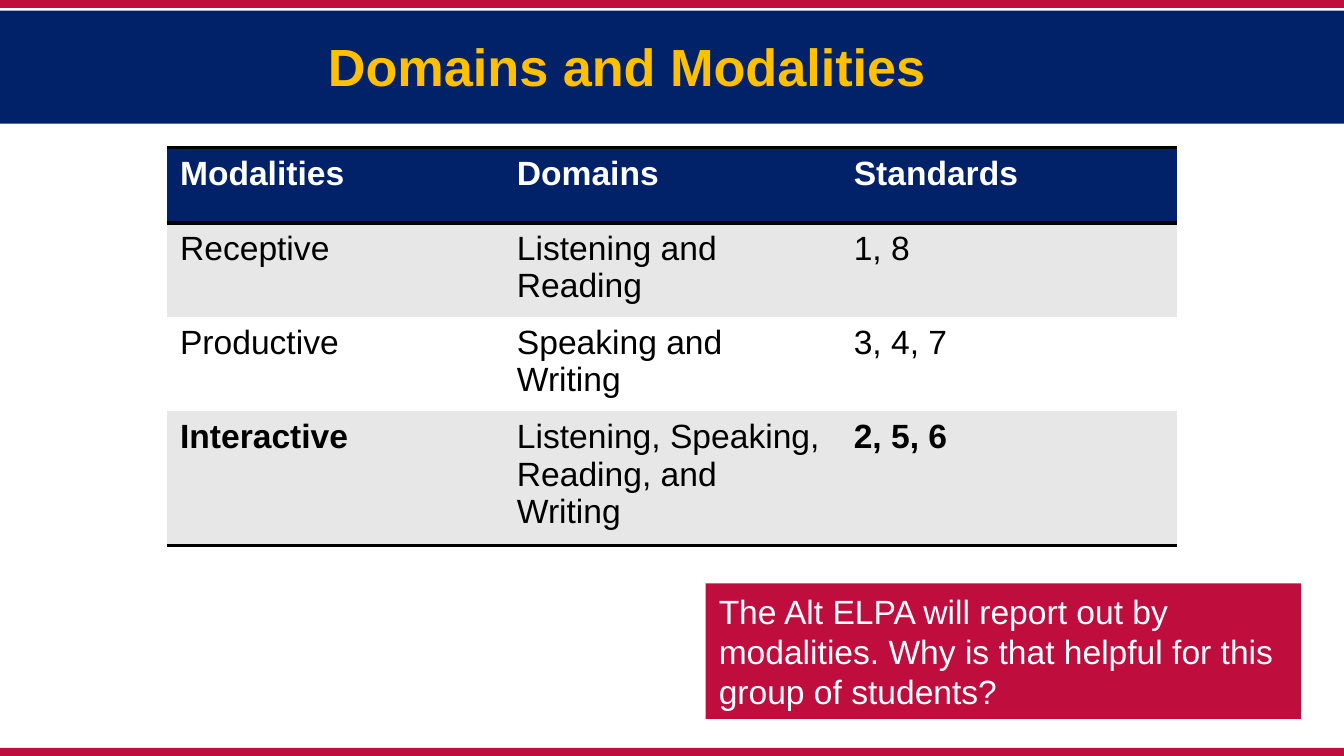
from dataclasses import dataclass

from lxml import etree
from pptx import Presentation
from pptx.dml.color import RGBColor
from pptx.enum.shapes import MSO_SHAPE
from pptx.enum.text import MSO_ANCHOR, PP_ALIGN
from pptx.oxml.ns import qn
from pptx.util import Inches, Pt

RECTANGLE = MSO_SHAPE.RECTANGLE
MIDDLE = MSO_ANCHOR.MIDDLE
LEFT = PP_ALIGN.LEFT
PLAIN_TABLE_STYLE = "{2D5ABB26-0587-4C30-8999-92F81FD0307C}"


@dataclass(frozen=True)
class Theme:
    font: str = "Arial"
    crimson: str = "BF0D3E"
    navy: str = "012169"
    gold: str = "FFC000"
    white: str = "FFFFFF"
    black: str = "000000"
    grey: str = "E7E7E7"
    title_size: int = 28
    body_size: int = 18
    border_width: int = 2


@dataclass(frozen=True)
class Box:
    left: float
    top: float
    width: float
    height: float

    def lengths(self) -> list:
        """Return the four measures as lengths."""
        return [Inches(value) for value in (self.left, self.top, self.width, self.height)]


@dataclass(frozen=True)
class Row:
    texts: tuple
    height: float
    fill: str
    color: str
    bold_columns: tuple = ()
    borders: tuple = ()


THEME = Theme()
SLIDE_WIDTH = 10
SLIDE_HEIGHT = SLIDE_WIDTH * 9 / 16
STRIPE_HEIGHT = 0.06
BANDS = [
    (Box(0, 0, SLIDE_WIDTH, STRIPE_HEIGHT), THEME.crimson),
    (Box(0, SLIDE_HEIGHT - STRIPE_HEIGHT, SLIDE_WIDTH, STRIPE_HEIGHT), THEME.crimson),
    (Box(0, 0.08, SLIDE_WIDTH, 0.84), THEME.navy),
]
TITLE_BOX = Box(2.34, 0.2, 5.13, 0.57)
TABLE_BOX = Box(1.24, 1.1, 7.52, 2.96)
CALLOUT_BOX = Box(5.25, 4.34, 4.43, 1.01)
CALLOUT_TEXT = ("The Alt ELPA will report out by modalities. "
                "Why is that helpful for this group of students?")
ROWS = [
    Row(("Modalities", "Domains", "Standards"), 0.56, THEME.navy, THEME.white,
        (0, 1, 2), ("a:lnT", "a:lnB")),
    Row(("Receptive", "Listening and Reading", "1, 8"), 0.7, THEME.grey, THEME.black),
    Row(("Productive", "Speaking and Writing", "3, 4, 7"), 0.7, THEME.white, THEME.black),
    Row(("Interactive", "Listening, Speaking, Reading, and Writing", "2, 5, 6"), 1,
        THEME.grey, THEME.black, (0, 2), ("a:lnB",)),
]


def write_text(text_frame, text: str, size: int, color: str, bold: bool) -> None:
    """Write one left-aligned paragraph."""
    paragraph = text_frame.paragraphs[0]
    paragraph.text = text
    paragraph.alignment = LEFT
    font = paragraph.runs[0].font
    for name, value in {"name": THEME.font, "size": Pt(size), "bold": bold}.items():
        setattr(font, name, value)
    font.color.rgb = RGBColor.from_string(color)


def format_frame(text_frame) -> None:
    """Wrap the text, centre it vertically and set its margins."""
    values = {
        "word_wrap": True, "vertical_anchor": MIDDLE,
        "margin_left": Inches(0.1), "margin_right": Inches(0.1),
        "margin_top": Inches(0.05), "margin_bottom": Inches(0.05),
    }
    for name, value in values.items():
        setattr(text_frame, name, value)


def add_rectangle(slide, box: Box, color: str):
    """Add a filled rectangle without outline or shadow."""
    shape = slide.shapes.add_shape(RECTANGLE, *box.lengths())
    shape.shadow.inherit = False
    shape.fill.solid()
    shape.fill.fore_color.rgb = RGBColor.from_string(color)
    shape.line.fill.background()
    return shape


def add_title(slide, text: str) -> None:
    """Place and fill the title placeholder in front of the bands."""
    title = slide.shapes.title
    title._element.getparent().append(title._element)
    for name, value in zip(("left", "top", "width", "height"), TITLE_BOX.lengths()):
        setattr(title, name, value)
    format_frame(title.text_frame)
    write_text(title.text_frame, text, THEME.title_size, THEME.gold, True)


def add_borders(cell, sides: tuple) -> None:
    """Draw solid lines on the given sides of a cell."""
    properties = cell._tc.get_or_add_tcPr()
    for position, side in enumerate(sides):
        line = etree.Element(qn(side), w=str(Pt(THEME.border_width)))
        fill = etree.SubElement(line, qn("a:solidFill"))
        etree.SubElement(fill, qn("a:srgbClr"), val=THEME.black)
        properties.insert(position, line)


def add_modality_table(slide) -> None:
    """Add the table of modalities, domains and standards."""
    column_count = len(ROWS[0].texts)
    table = slide.shapes.add_table(len(ROWS), column_count, *TABLE_BOX.lengths()).table
    table.horz_banding = False
    table._tbl.tblPr.find(qn("a:tableStyleId")).text = PLAIN_TABLE_STYLE
    for column in table.columns:
        column.width = Inches(TABLE_BOX.width / column_count)
    for row_index, row in enumerate(ROWS):
        table.rows[row_index].height = Inches(row.height)
        for column_index, text in enumerate(row.texts):
            cell = table.cell(row_index, column_index)
            cell.fill.solid()
            cell.fill.fore_color.rgb = RGBColor.from_string(row.fill)
            write_text(cell.text_frame, text, THEME.body_size, row.color,
                       column_index in row.bold_columns)
            add_borders(cell, row.borders)


def add_callout(slide) -> None:
    """Add the question box below the table."""
    callout = add_rectangle(slide, CALLOUT_BOX, THEME.crimson)
    format_frame(callout.text_frame)
    write_text(callout.text_frame, CALLOUT_TEXT, THEME.body_size, THEME.white, False)


def main() -> None:
    """Build and save the slide."""
    presentation = Presentation()
    presentation.slide_width = Inches(SLIDE_WIDTH)
    presentation.slide_height = Inches(SLIDE_HEIGHT)
    slide = presentation.slides.add_slide(presentation.slide_layouts[5])
    for box, color in BANDS:
        add_rectangle(slide, box, color)
    add_title(slide, "Domains and Modalities")
    add_modality_table(slide)
    add_callout(slide)
    presentation.save("out.pptx")


if __name__ == "__main__":
    main()
